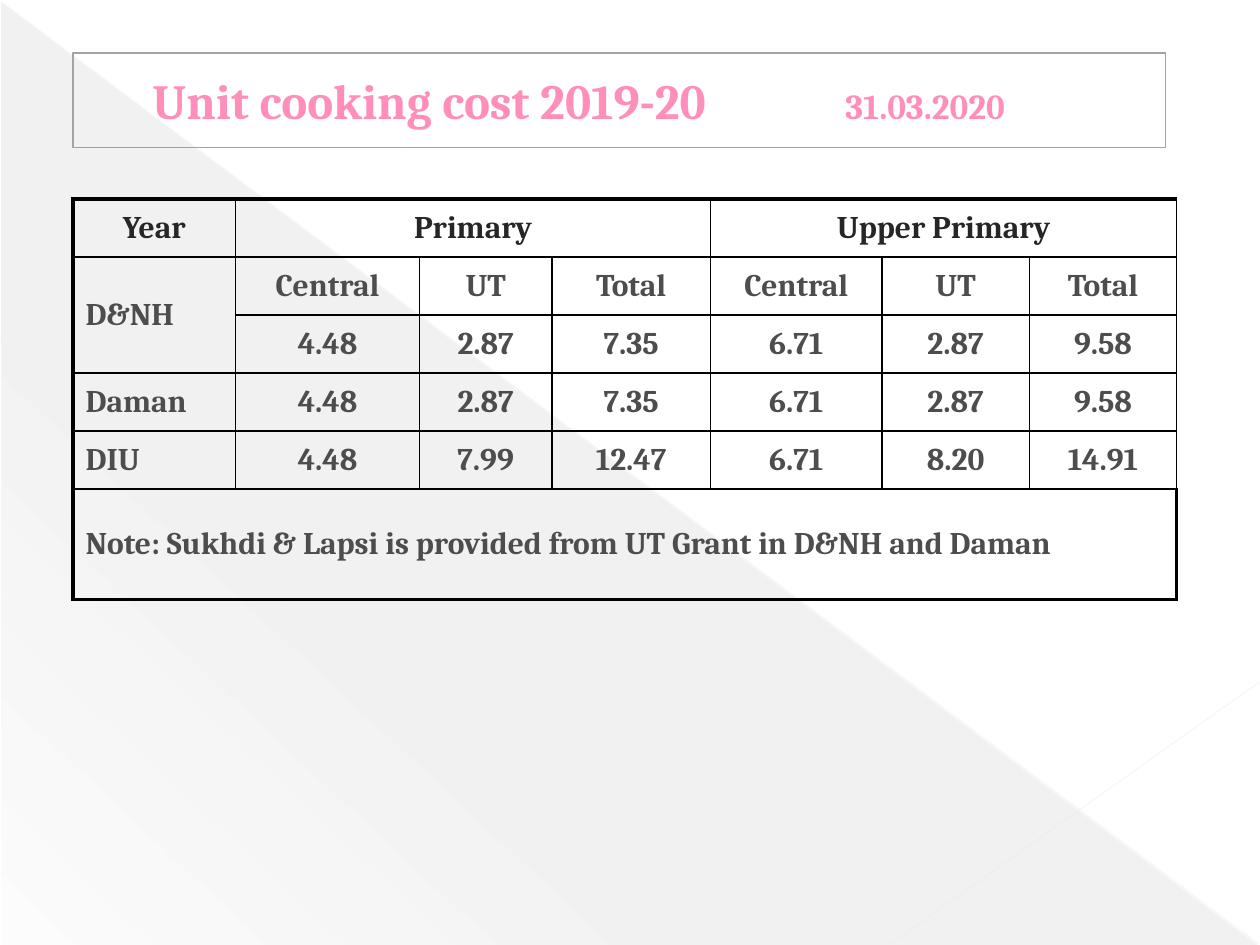
import dataclasses

import lxml.etree
import pptx
import pptx.dml.color
import pptx.enum.shapes
import pptx.enum.text
import pptx.oxml
import pptx.oxml.ns
import pptx.util

SCALE = 9144  # EMU in one px, 100 px to the inch
FONT = "Cambria"
HEX = {
    "pink": "FF8EBA", "rim": "B12761", "frame": "A3A3A3",
    "head": "262626", "body": "4D4D4D", "grid": "000000",
    "shade": "666666", "long": "E8E8E8", "short": "EAEAEA",
}
ALIGN = pptx.enum.text.PP_ALIGN
MIDDLE = pptx.enum.text.MSO_ANCHOR.MIDDLE
THIN, THICK = 1, 2.25

COLS = [129, 146, 105, 126, 136, 117, 117]
ROWS = [46, 46, 46, 46, 46, 88]
DATA = [
    ["Year", "Primary", "", "", "Upper Primary", "", ""],
    ["D&NH"] + ["Central", "UT", "Total"] * 2,
    ["", "4.48", "2.87", "7.35", "6.71", "2.87", "9.58"],
    ["Daman", "4.48", "2.87", "7.35", "6.71", "2.87", "9.58"],
    ["DIU", "4.48", "7.99", "12.47", "6.71", "8.20", "14.91"],
    ["Note: Sukhdi & Lapsi is provided from UT Grant in D&NH and Daman"]
    + [""] * 6,
]
# First row, first column, last row, last column
SPANS = [(0, 1, 0, 3), (0, 4, 0, 6), (1, 0, 2, 0), (5, 0, 5, 6)]


@dataclasses.dataclass
class Ray:
    """A faint background line."""
    start: tuple[int, int]
    end: tuple[int, int]
    hue: str
    width: float
    alpha: int


RAYS = [
    Ray((0, 1), (999, 749), "long", 0.39, 35),
    Ray((1000, 541), (707, 749), "short", 0.47, 45),
]


def px(num: int) -> int:
    return pptx.util.Emu(num * SCALE)


def rgb(key: str) -> pptx.dml.color.RGBColor:
    return pptx.dml.color.RGBColor.from_string(HEX[key])


def node(text: str) -> lxml.etree._Element:
    """Parse a drawing element, adding its namespace."""
    tag, rest = text[:text.index(">")], text[text.index(">"):]
    return pptx.oxml.parse_xml(f"{tag} {pptx.oxml.ns.nsdecls('a')}{rest}")


def style(run, size: int, hue: str) -> None:
    look = {"name": FONT, "size": pptx.util.Pt(size), "bold": True}
    for key, value in look.items():
        setattr(run.font, key, value)
    run.font.color.rgb = rgb(hue)


def draw_shade(slide) -> None:
    """The pale triangle, fading to the lower left."""
    shape = slide.shapes.add_shape(
        pptx.enum.shapes.MSO_SHAPE.RIGHT_TRIANGLE,
        px(1), px(2), px(998), px(748))
    shape.shadow.inherit = False
    shape.line.fill.background()
    stops = "".join(
        f'<a:gs pos="{pos * 1000}"><a:srgbClr val="{HEX["shade"]}">'
        f'<a:alpha val="{alpha * 1000}"/></a:srgbClr></a:gs>'
        for pos, alpha in [(0, 10), (70, 8), (100, 1)])
    fade = node(f"<a:gradFill><a:gsLst>{stops}</a:gsLst>"
                f'<a:lin ang="{133 * 60000}" scaled="0"/></a:gradFill>')
    shape.element.spPr.find(pptx.oxml.ns.qn("a:prstGeom")).addnext(fade)


def draw_ray(slide, ray: Ray) -> None:
    line = slide.shapes.add_connector(
        pptx.enum.shapes.MSO_CONNECTOR.STRAIGHT,
        *map(px, ray.start + ray.end))
    line.line.width = pptx.util.Pt(ray.width)
    line.line.color.rgb = rgb(ray.hue)
    props = line.element.spPr
    tint = props.find(".//" + pptx.oxml.ns.qn("a:srgbClr"))
    tint.append(node(f'<a:alpha val="{ray.alpha * 1000}"></a:alpha>'))
    props.append(node("<a:effectLst></a:effectLst>"))


def draw_title(slide) -> None:
    title = slide.shapes.title
    # Bring the title in front of the background
    title.element.getparent().append(title.element)
    place = {"left": 58, "top": 42, "width": 867, "height": 75}
    for key, value in place.items():
        setattr(title, key, px(value))
    title.line.color.rgb = rgb("frame")
    title.line.width = pptx.util.Pt(0.75)
    frame = title.text_frame
    form = {"word_wrap": True, "vertical_anchor": MIDDLE,
            "auto_size": pptx.enum.text.MSO_AUTO_SIZE.NONE,
            "margin_left": px(63)}
    for key, value in form.items():
        setattr(frame, key, value)
    para = frame.paragraphs[0]
    para.alignment = ALIGN.LEFT
    for text, size in [("Unit cooking cost 2019-20\t", 28), ("31.03.2020", 20)]:
        run = para.add_run()
        run.text = text
        style(run, size, "pink")
        run.font.fill._xPr.insert(0, node(
            f'<a:ln w="6350"><a:solidFill><a:srgbClr val="{HEX["rim"]}"/>'
            "</a:solidFill></a:ln>"))
    # The date starts at a tab stop
    para._p.get_or_add_pPr().append(node(
        f'<a:tabLst><a:tab pos="{px(550)}" algn="l"/></a:tabLst>'))


def set_edges(cell, row: int, col: int) -> None:
    last = row == len(ROWS) - 1
    bold = {"L": col == 0, "R": last, "T": row == 0, "B": last}
    props = cell._tc.get_or_add_tcPr()
    for spot, (side, thick) in enumerate(bold.items()):
        width = pptx.util.Pt(THICK if thick else THIN)
        props.insert(spot, node(
            f'<a:ln{side} w="{width}"><a:solidFill>'
            f'<a:srgbClr val="{HEX["grid"]}"/></a:solidFill></a:ln{side}>'))


def fill_cell(cell, text: str, row: int, col: int) -> None:
    cell.fill.background()
    cell.vertical_anchor = MIDDLE
    set_edges(cell, row, col)
    if not text:
        return
    para = cell.text_frame.paragraphs[0]
    para.space_before = pptx.util.Pt(3.6)
    if row == len(ROWS) - 1:
        para.alignment = ALIGN.JUSTIFY
    else:
        para.alignment = ALIGN.CENTER if row == 0 or col else ALIGN.LEFT
    run = para.add_run()
    run.text = text
    style(run, 18, "body" if row else "head")


def draw_table(slide) -> None:
    table = slide.shapes.add_table(
        len(ROWS), len(COLS), px(58), px(158),
        px(sum(COLS)), px(sum(ROWS))).table
    table.first_row = table.horz_banding = False
    for col, width in zip(table.columns, COLS):
        col.width = px(width)
    for row, height in zip(table.rows, ROWS):
        row.height = px(height)
    for top, left, low, right in SPANS:
        table.cell(top, left).merge(table.cell(low, right))
    for row, line in enumerate(DATA):
        for col, text in enumerate(line):
            fill_cell(table.cell(row, col), text, row, col)


def main() -> None:
    deck = pptx.Presentation()
    deck.slide_width, deck.slide_height = px(1000), px(750)
    slide = deck.slides.add_slide(deck.slide_layouts[5])
    # Background
    draw_shade(slide)
    for ray in RAYS:
        draw_ray(slide, ray)
    # Content
    draw_title(slide)
    draw_table(slide)
    deck.save("out.pptx")


if __name__ == "__main__":
    main()
